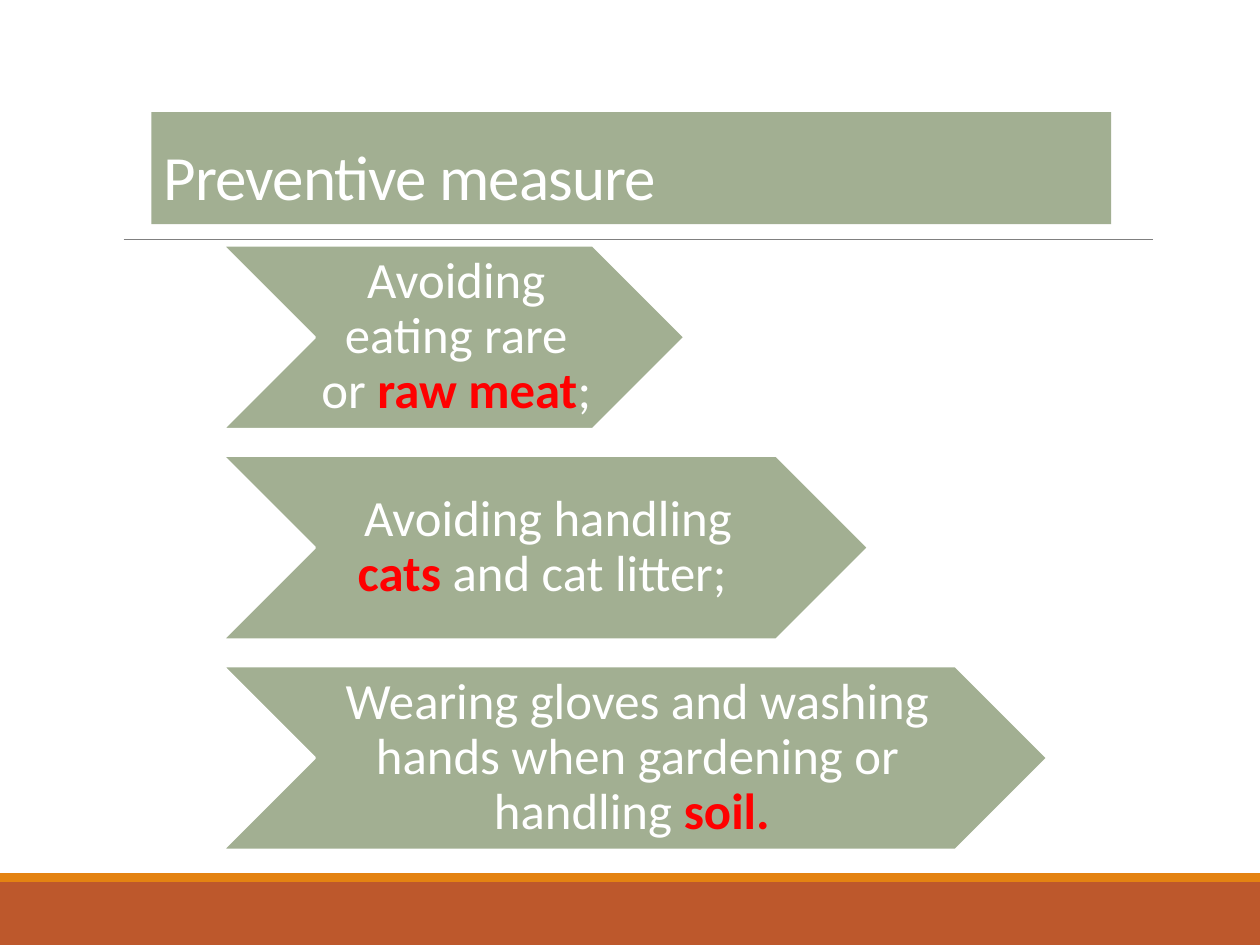
from lxml import etree
from pptx import Presentation
from pptx import util as u
from pptx.dml.color import RGBColor
from pptx.enum import shapes, text
from pptx.oxml.ns import qn

COLORS = {
    "sage": "A2AF92",
    "rust": "BD582C",
    "orange": "E48312",
    "rule": "808080",
    "white": "FFFFFF",
    "red": "FF0000",
}
FONT = "Calibri"

# Chevron layout in centimetres
LEFT, TOP, HEIGHT, PITCH = 4.5, 4.95, 3.7, 4.24
NOTCH = HEIGHT / 2

# Width of each chevron and its (text, emphasised) runs
MEASURES = [
    (9.3, [("Avoiding eating rare or ", False), ("raw meat", True), ("; ", False)]),
    (13.0, [("Avoiding handling ", False), ("cats", True), (" and cat litter; ", False)]),
    (16.61, [("Wearing gloves and washing hands when gardening or handling ", False),
             ("soil. ", True)]),
]


def color(name):
    return RGBColor.from_string(COLORS[name])


def box(left, top, width, height):
    return [u.Cm(value) for value in (left, top, width, height)]


def add_filled(slide, kind, bounds, fill, line=None):
    shape = slide.shapes.add_shape(kind, *bounds)
    shape.shadow.inherit = False
    shape.fill.solid()
    shape.fill.fore_color.rgb = color(fill)
    if line:
        shape.line.color.rgb = color(line)
        shape.line.width = u.Pt(1.25)
    else:
        shape.line.fill.background()


def add_rule(slide, left, right, top):
    rule = slide.shapes.add_connector(
        shapes.MSO_CONNECTOR.STRAIGHT, u.Cm(left), u.Cm(top), u.Cm(right), u.Cm(top))
    rule.line.color.rgb = color("rule")
    rule.line.width = u.Pt(0.5)
    etree.SubElement(rule._element.spPr, qn("a:effectLst"))


def format_paragraph(paragraph, size, alignment, line_spacing):
    paragraph.alignment = alignment
    paragraph.line_spacing = line_spacing
    paragraph.font.name = FONT
    paragraph.font.size = u.Pt(size)
    paragraph.font.color.rgb = color("white")


def set_title(slide, wording):
    title = slide.shapes.title
    title.left, title.top, title.width, title.height = box(3.05, 2.26, 19.35, 2.26)
    title.fill.solid()
    title.fill.fore_color.rgb = color("sage")
    frame = title.text_frame
    frame.auto_size = text.MSO_AUTO_SIZE.NONE
    frame.vertical_anchor = text.MSO_ANCHOR.BOTTOM
    paragraph = frame.paragraphs[0]
    format_paragraph(paragraph, 36, text.PP_ALIGN.LEFT, 0.85)
    # The larger closing space sets the height of the line
    for part, size in ((wording, 36), (" ", 48)):
        run = paragraph.add_run()
        run.text = part
        run.font.size = u.Pt(size)
        run.font._element.set("spc", "-50")


def add_measure(slide, top, width, runs):
    add_filled(slide, shapes.MSO_SHAPE.CHEVRON, box(LEFT, top, width, HEIGHT),
               "sage", "white")
    label = slide.shapes.add_textbox(
        *box(LEFT + NOTCH, top, width - 2 * NOTCH, HEIGHT))
    frame = label.text_frame
    frame.word_wrap = True
    frame.vertical_anchor = text.MSO_ANCHOR.MIDDLE
    frame.margin_left, frame.margin_right = u.Cm(0.1), 0
    frame.margin_top = frame.margin_bottom = u.Cm(0.05)
    paragraph = frame.paragraphs[0]
    format_paragraph(paragraph, 29, text.PP_ALIGN.CENTER, 0.9)
    for part, emphasised in runs:
        run = paragraph.add_run()
        run.text = part
        if emphasised:
            run.font.bold = True
            run.font.color.rgb = color("red")


def main():
    presentation = Presentation()
    presentation.slide_width, presentation.slide_height = u.Cm(25.4), u.Cm(19.05)
    slide = presentation.slides.add_slide(presentation.slide_layouts[5])

    # Footer bands and rule under the title
    rectangle = shapes.MSO_SHAPE.RECTANGLE
    add_filled(slide, rectangle, box(0, 17.78, 25.4, 1.27), "rust")
    add_filled(slide, rectangle, box(0, 17.6, 25.4, 0.18), "orange")
    add_rule(slide, 2.49, 23.24, 4.83)

    set_title(slide, "Preventive measure")

    # Chevrons, widening downwards
    for row, (width, runs) in enumerate(MEASURES):
        add_measure(slide, TOP + row * PITCH, width, runs)

    presentation.save("out.pptx")


if __name__ == "__main__":
    main()
